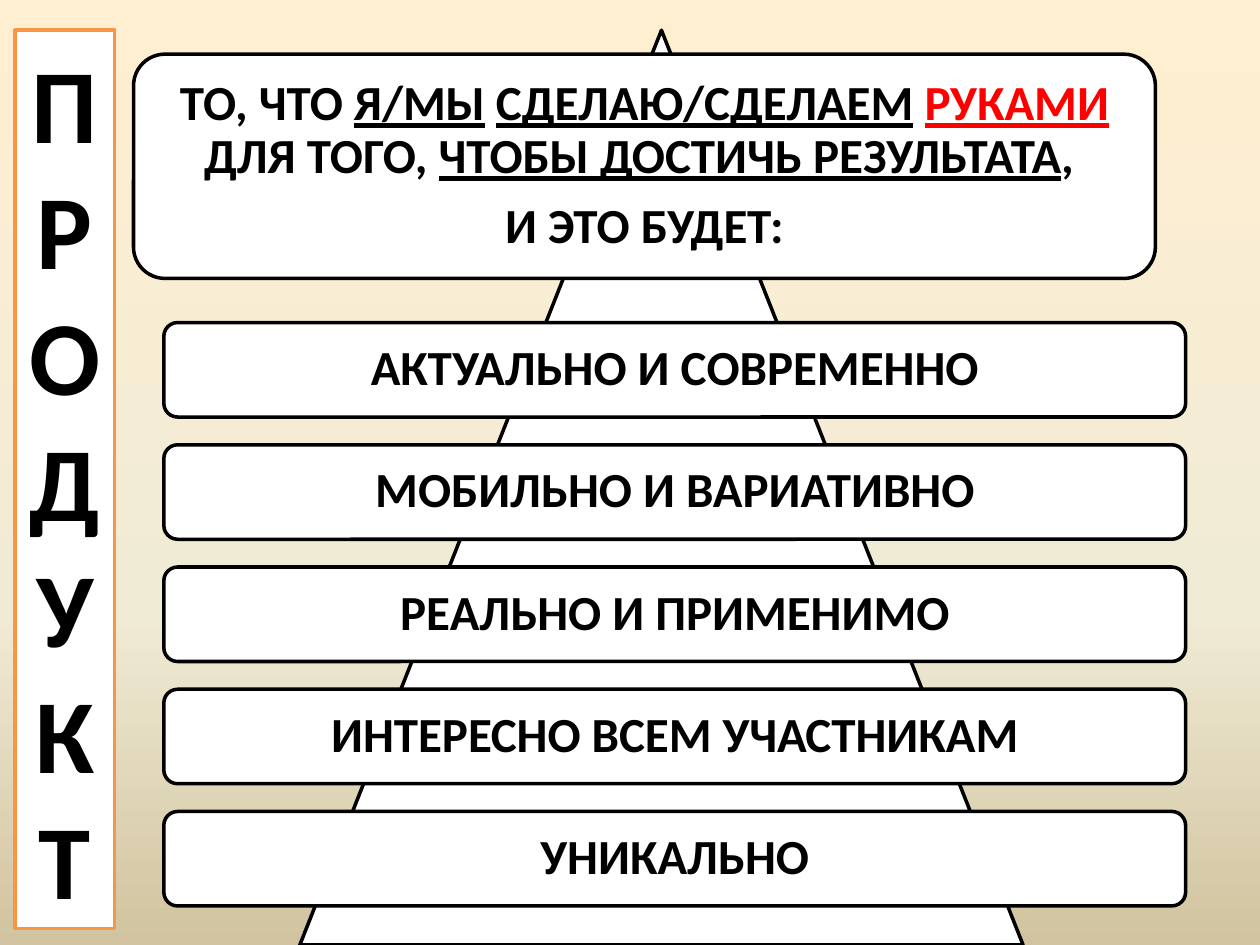
from copy import deepcopy
from pptx import Presentation
from pptx import util as u
from pptx.dml import color
from pptx.enum import shapes, text
from pptx.oxml import ns

BLACK, WHITE, RED, ORANGE = "000000", "FFFFFF", "FF0000", "F79646"
BACKGROUND = [(0, "FFEFD1"), (0.65, "F0EBD5"), (1, "D1C39F")]
WORD = "ПРОДУКТ"
PLAIN, UNDER, ACCENT = (BLACK, False), (BLACK, True), (RED, True)
HEADER = [
    [("ТО, ЧТО ", PLAIN), ("Я/МЫ", UNDER), (" ", PLAIN),
     ("СДЕЛАЮ/СДЕЛАЕМ", UNDER), (" ", PLAIN), ("РУКАМИ", ACCENT),
     (" ДЛЯ ТОГО, ", PLAIN), ("ЧТОБЫ ДОСТИЧЬ РЕЗУЛЬТАТА", UNDER),
     (", ", PLAIN)],
    [("И ЭТО БУДЕТ:", PLAIN)],
]
QUALITIES = [
    "АКТУАЛЬНО И СОВРЕМЕННО",
    "МОБИЛЬНО И ВАРИАТИВНО",
    "РЕАЛЬНО И ПРИМЕНИМО",
    "ИНТЕРЕСНО ВСЕМ УЧАСТНИКАМ",
    "УНИКАЛЬНО",
]
CARD_PARAGRAPH = {"line_spacing": 0.9, "space_after": u.Pt(9.8)}
BAR_LEFT, BAR_TOP, BAR_WIDTH, BAR_HEIGHT, BAR_STEP = 1.3, 2.56, 8.11, 0.75, 0.97


def rgb(value):
    return color.RGBColor.from_string(value)


def apply(obj, values):
    for name, value in values.items():
        setattr(obj, name, value)


def add_box(s, kind, box, line=BLACK):
    sp = s.shapes.add_shape(kind, *map(u.Inches, box))
    sp.shadow.inherit = False
    sp.fill.solid()
    sp.fill.fore_color.rgb = rgb(WHITE)
    sp.line.color.rgb = rgb(line)
    sp.line.width = u.Pt(2)
    return sp


def write(sp, paragraphs, size, layout):
    tf = sp.text_frame
    apply(tf, {"word_wrap": True, "vertical_anchor": text.MSO_ANCHOR.MIDDLE})
    for i, runs in enumerate(paragraphs):
        p = tf.add_paragraph() if i else tf.paragraphs[0]
        apply(p, {"alignment": text.PP_ALIGN.CENTER, **layout})
        for words, (ink, underline) in runs:
            r = p.add_run()
            r.text = words
            apply(r.font, {"name": "Calibri", "size": u.Pt(size),
                           "bold": True, "underline": underline})
            r.font.color.rgb = rgb(ink)


def add_card(s, box, paragraphs, radius, inset):
    sp = add_box(s, shapes.MSO_SHAPE.ROUNDED_RECTANGLE, box)
    sp.adjustments[0] = radius / box[3]
    sides = ("left", "top", "right", "bottom")
    apply(sp.text_frame, {f"margin_{side}": u.Inches(inset) for side in sides})
    write(sp, paragraphs, 28, CARD_PARAGRAPH)


def paint_background(s):
    fill = s.background.fill
    fill.gradient()
    fill.gradient_angle = 270
    first = next(s.element.iter(ns.qn("a:gs")))
    first.addnext(deepcopy(first))
    for stop, (position, value) in zip(fill.gradient_stops, BACKGROUND):
        stop.position = position
        stop.color.rgb = rgb(value)


def main():
    prs = Presentation()
    apply(prs, {"slide_width": u.Inches(10), "slide_height": u.Inches(7.5)})
    s = prs.slides.add_slide(prs.slide_layouts[6])
    paint_background(s)
    add_box(s, shapes.MSO_SHAPE.ISOSCELES_TRIANGLE, (2.38, 0.24, 5.74, 7.26))
    add_card(s, (1.06, 0.43, 8.11, 1.78), HEADER, 0.25, 0.06)
    for i, quality in enumerate(QUALITIES):
        box = (BAR_LEFT, BAR_TOP + i * BAR_STEP, BAR_WIDTH, BAR_HEIGHT)
        add_card(s, box, [[(quality, PLAIN)]], 0.11, 0.07)
    column = add_box(s, shapes.MSO_SHAPE.RECTANGLE, (0.12, 0.24, 0.79, 7.13), ORANGE)
    write(column, [[(letter, PLAIN)] for letter in WORD], 60, {})
    prs.save("out.pptx")


if __name__ == "__main__":
    main()
